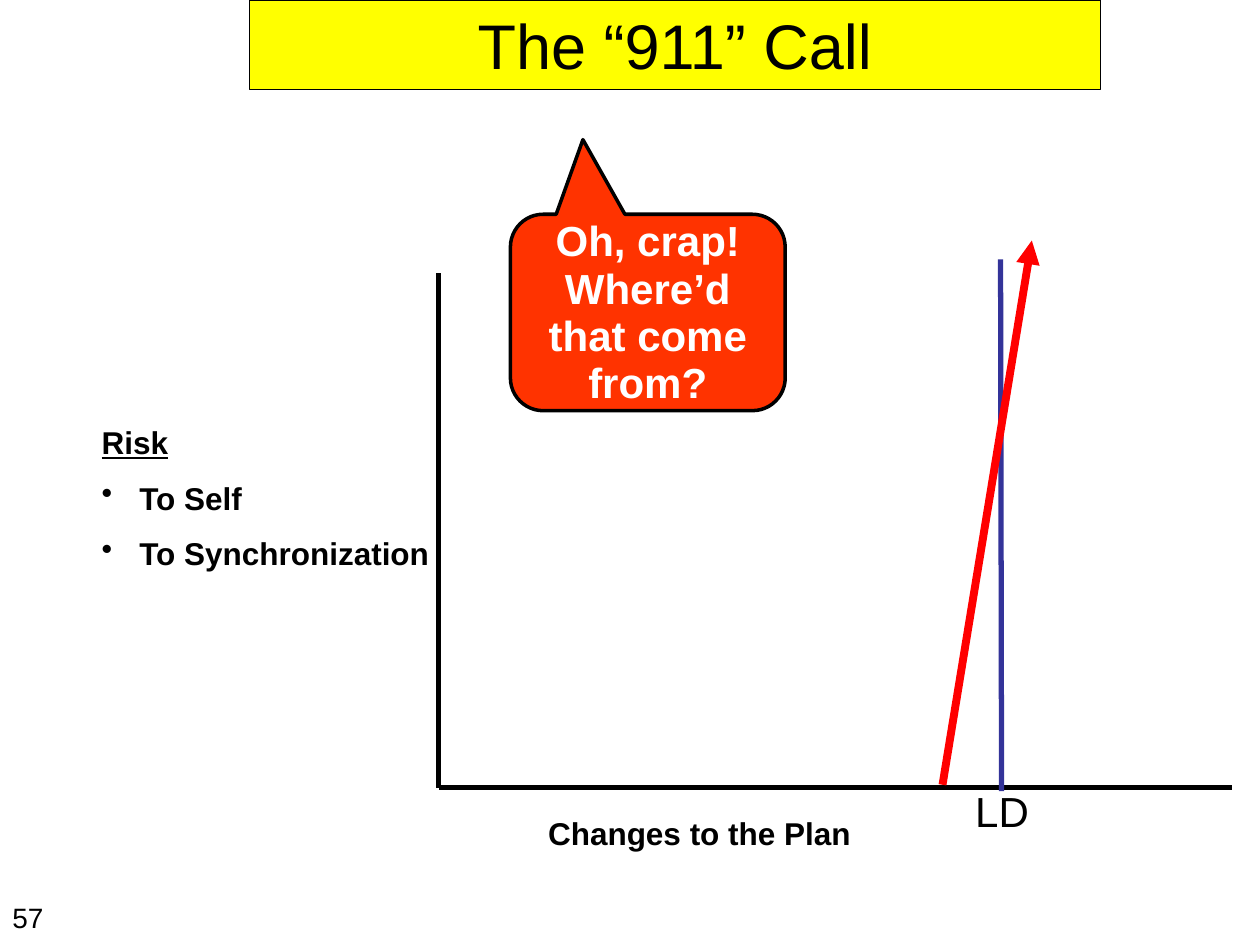
import pptx
import pptx.util
import pptx.dml.color
import pptx.enum.shapes
import pptx.enum.text
import pptx.oxml
import pptx.oxml.ns

Cm, Pt = pptx.util.Cm, pptx.util.Pt
Align = pptx.enum.text.PP_ALIGN
Mid = pptx.enum.text.MSO_ANCHOR.MIDDLE
Top = pptx.enum.text.MSO_ANCHOR.TOP

theme = {
    "font": "Arial",
    "ink": "000000", "white": "FFFFFF", "gold": "FFFF00",
    "alarm": "FF3300", "red": "FF0000", "navy": "333399",
    "head": 36, "large": 24, "body": 18, "page": 16,
}

left, right, top, base = 8.84, 24.84, 5.51, 15.88
lines = [
    ((left, top), (left, base), "ink", 3, False),
    ((left, base), (right, base), "ink", 3, False),
    ((20.17, 5.23), (20.19, 15.95), "navy", 3, False),
    ((19, 15.82), (20.8, 4.85), "red", 4.5, True),
]

title = ("The “911” Call", (5.03, 0, 17.15, 1.8))
shout = ("Oh, crap! Where’d that come from?", (10.29, 4.32, 5.54, 3.96))
tail = (-0.236, -0.88, 0.167)
labels = [
    (["Changes to the Plan"], (10.8, 16.28, 13.26, 1.02), "body", True),
    (["LD"], (19.41, 15.72, 2.51, 1.27), "large", False),
    (["Risk", "To Self", "To Synchronization"], (1.8, 8.41, 8.18, 3.33), "body", True),
    (["57"], (0, 18.03, 1.17, 1.02), "page", False),
]


def tint(name):
    return pptx.dml.color.RGBColor.from_string(theme[name])


def apply(item, look):
    for key, value in look.items():
        setattr(item, key, value)


def place(shape, box):
    apply(shape, dict(zip(("left", "top", "width", "height"), map(Cm, box))))


def paint(shape, fill, width):
    shape.fill.solid()
    shape.fill.fore_color.rgb = tint(fill)
    shape.line.color.rgb = tint("ink")
    shape.line.width = Pt(width)


def add_xml(parent, tag, **attrs):
    node = pptx.oxml.parse_xml(f"<a:{tag} {pptx.oxml.ns.nsdecls('a')}/>")
    for key, value in attrs.items():
        node.set(key, value)
    parent.append(node)


def style(para, size, color="ink", bold=False, under=False):
    apply(para.font, {"name": theme["font"], "size": Pt(theme[size]),
                      "bold": bold, "underline": under})
    para.font.color.rgb = tint(color)


def write(shape, texts, size, color="ink", bold=False, align=Align.LEFT, anchor=Top):
    frame = shape.text_frame
    apply(frame, {"word_wrap": True, "vertical_anchor": anchor})
    for i, text in enumerate(texts):
        para = frame.add_paragraph() if i else frame.paragraphs[0]
        para.text = text
        para.alignment = align
        if i:
            para.space_before = Pt(10)
            props = para._p.get_or_add_pPr()
            props.set("marL", str(Cm(0.76)))
            props.set("indent", str(-Cm(0.76)))
            add_xml(props, "buChar", char="•")
        style(para, size, color, bold, len(texts) > 1 and i == 0)


def draw(slide, start, end, color, width, arrow):
    ends = map(Cm, (*start, *end))
    line = slide.shapes.add_connector(pptx.enum.shapes.MSO_CONNECTOR.STRAIGHT, *ends)
    line.line.color.rgb = tint(color)
    line.line.width = Pt(width)
    if arrow:
        add_xml(line.line._get_or_add_ln(), "tailEnd", type="triangle")
    add_xml(line._element.spPr, "effectLst")


def main():
    deck = pptx.Presentation()
    apply(deck, {"slide_width": Cm(25.4), "slide_height": Cm(19.05)})
    slide = deck.slides.add_slide(deck.slide_layouts[5])

    text, box = title
    head = slide.shapes.title
    place(head, box)
    paint(head, "gold", 0.75)
    write(head, [text], "head", align=Align.CENTER, anchor=Mid)

    for line in lines:
        draw(slide, *line)

    for texts, box, size, bold in labels:
        label = slide.shapes.add_textbox(*map(Cm, box))
        write(label, texts, size, bold=bold)

    text, box = shout
    kind = pptx.enum.shapes.MSO_SHAPE.ROUNDED_RECTANGULAR_CALLOUT
    bubble = slide.shapes.add_shape(kind, *map(Cm, box))
    bubble.shadow.inherit = False
    for i, value in enumerate(tail):
        bubble.adjustments[i] = value
    paint(bubble, "alarm", 2)
    write(bubble, [text], "large", "white", True, Align.CENTER, Mid)
    bubble.text_frame.paragraphs[0].line_spacing = Pt(27)

    deck.save("out.pptx")


if __name__ == "__main__":
    main()
